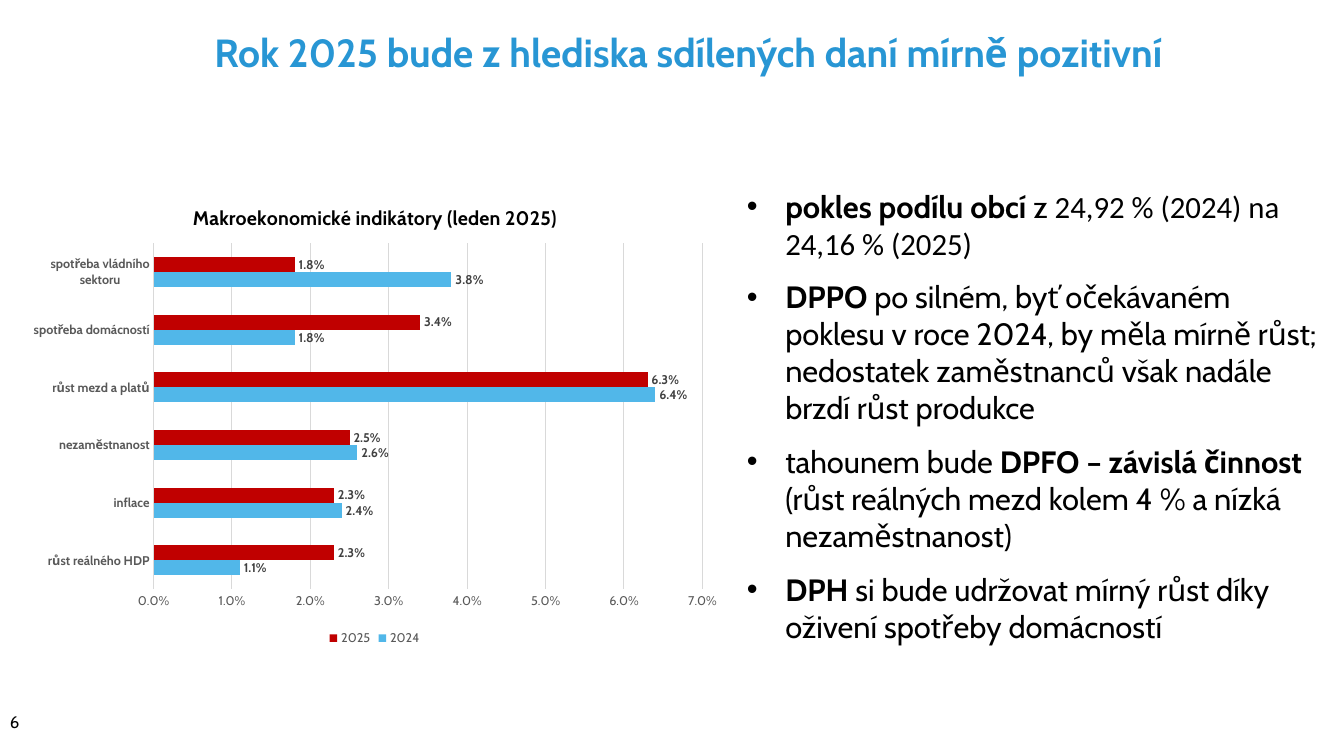
from lxml import etree
from pptx import Presentation
from pptx.chart.data import CategoryChartData
from pptx.dml.color import RGBColor
from pptx.enum.chart import XL_CHART_TYPE, XL_LABEL_POSITION, XL_LEGEND_POSITION, XL_TICK_MARK
from pptx.enum.text import MSO_ANCHOR, PP_ALIGN
from pptx.oxml.ns import qn
from pptx.util import Inches, Pt

COLORS = {"title": "2896D4", "text": "000000", "axis": "595959", "grid": "D9D9D9",
          "label": "404040", "2024": "51B7E9", "2025": "C00000"}


def style(font, size, color, bold=False, name="Cabin"):
    font.name, font.size, font.bold = name, Pt(size), bold
    font.color.rgb = RGBColor.from_string(COLORS[color])


def place(parent, index, **parts):
    """Give a chart part a manual layout, in fractions of the chart."""
    for old in parent.findall(qn("c:layout")):
        parent.remove(old)
    layout = etree.Element(qn("c:layout"))
    manual = etree.SubElement(layout, qn("c:manualLayout"))
    for tag, val in parts.items():
        etree.SubElement(manual, qn("c:" + tag)).set("val", str(val))
    parent.insert(index, layout)


prs = Presentation()
prs.slide_width, prs.slide_height = Inches(13.33), Inches(7.5)
slide = prs.slides.add_slide(prs.slide_layouts[5])

# Title
title = slide.shapes.title
title.left, title.top = Inches(0.92), Inches(0.02)
title.width, title.height = Inches(11.81), Inches(0.98)
title.text_frame.text = "Rok 2025 bude z hlediska sdílených daní mírně pozitivní"
title.text_frame.vertical_anchor = MSO_ANCHOR.MIDDLE
head = title.text_frame.paragraphs[0]
head.alignment = PP_ALIGN.CENTER
style(head.runs[0].font, 28, "title", True)

# Page number
page = slide.shapes.add_textbox(Inches(0), Inches(6.95), Inches(0.48), Inches(0.43))
page.text_frame.text = "6"
page.text_frame.vertical_anchor = MSO_ANCHOR.MIDDLE
style(page.text_frame.paragraphs[0].runs[0].font, 12, "text")

# Chart
data = CategoryChartData(number_format="0.0%")
data.categories = ["růst reálného HDP", "inflace", "nezaměstnanost", "růst mezd a platů",
                   "spotřeba domácností", "spotřeba vládního sektoru"]
data.add_series("2024", [0.011, 0.024, 0.026, 0.064, 0.018, 0.038])
data.add_series("2025", [0.023, 0.023, 0.025, 0.063, 0.034, 0.018])
chart = slide.shapes.add_chart(XL_CHART_TYPE.BAR_CLUSTERED, Inches(0.18), Inches(1.81),
                               Inches(7.07), Inches(4.64), data).chart
style(chart.font, 10, "text")

chart.has_title = True
name = chart.chart_title.text_frame
name.text = "Makroekonomické indikátory (leden 2025)"
style(name.paragraphs[0].runs[0].font, 14, "text", True)
place(chart.chart_title._element, 1, xMode="edge", yMode="edge", x=0.24, y=0.04)
place(chart.plots[0]._element.getparent(), 0, layoutTarget="inner", xMode="edge",
      yMode="edge", x=0.19, y=0.13, w=0.77, h=0.74)

chart.has_legend = True
chart.legend.position = XL_LEGEND_POSITION.BOTTOM
chart.legend.include_in_layout = False
style(chart.legend.font, 9, "axis")

cats, vals = chart.category_axis, chart.value_axis
for axis in (cats, vals):
    axis.major_tick_mark = axis.minor_tick_mark = XL_TICK_MARK.NONE
    style(axis.tick_labels.font, 9, "axis", axis is cats)
vals.minimum_scale, vals.maximum_scale, vals.major_unit = 0, 0.07, 0.01
vals.tick_labels.number_format = "0.0%"
vals.tick_labels.number_format_is_linked = False
vals.format.line.fill.background()
for line in (cats.format.line, vals.major_gridlines.format.line):
    line.color.rgb = RGBColor.from_string(COLORS["grid"])
    line.width = Pt(0.75)

plot = chart.plots[0]
plot.gap_width, plot.overlap = 182, 0
plot.vary_by_categories = False
for series in plot.series:
    series.format.fill.solid()
    series.format.fill.fore_color.rgb = RGBColor.from_string(COLORS[series.name])
    labels = series.data_labels
    labels.show_value = True
    labels.position = XL_LABEL_POSITION.OUTSIDE_END
    labels.number_format = "0.0%"
    labels.number_format_is_linked = False
    style(labels.font, 9, "label", True)

# Bullets: each run is text, bold, font
points = [
    [("pokles podílu obcí ", True, "Cabin"), ("z ", False, "Cabin"),
     ("24,92 % (2024) na 24,16 % (2025)", False, "Calibri")],
    [("DPPO ", True, "Cabin"),
     ("po silném, byť očekávaném poklesu v roce 2024, by měla mírně růst; "
      "nedostatek zaměstnanců však nadále brzdí růst produkce", False, "Cabin")],
    [("tahounem bude ", False, "Cabin"), ("DPFO – závislá činnost", True, "Cabin"),
     (" (růst reálných mezd kolem 4 % a nízká nezaměstnanost)", False, "Cabin")],
    [("DPH ", True, "Cabin"),
     ("si bude udržovat mírný růst díky oživení spotřeby domácností", False, "Cabin")],
]
body = slide.shapes.add_textbox(Inches(6.81), Inches(1.81), Inches(6.39), Inches(4.68)).text_frame
body.word_wrap = True
for i, point in enumerate(points):
    para = body.add_paragraph() if i else body.paragraphs[0]
    para.level = 1
    para.space_after = Pt(12)
    props = para._p.get_or_add_pPr()
    props.set("marL", str(Inches(0.88)))
    props.set("indent", str(Inches(-0.38)))
    etree.SubElement(props, qn("a:buFont")).set("typeface", "Arial")
    etree.SubElement(props, qn("a:buChar")).set("char", "•")
    for text, bold, face in point:
        run = para.add_run()
        run.text = text
        style(run.font, 22, "text", bold, face)

prs.save("out.pptx")
